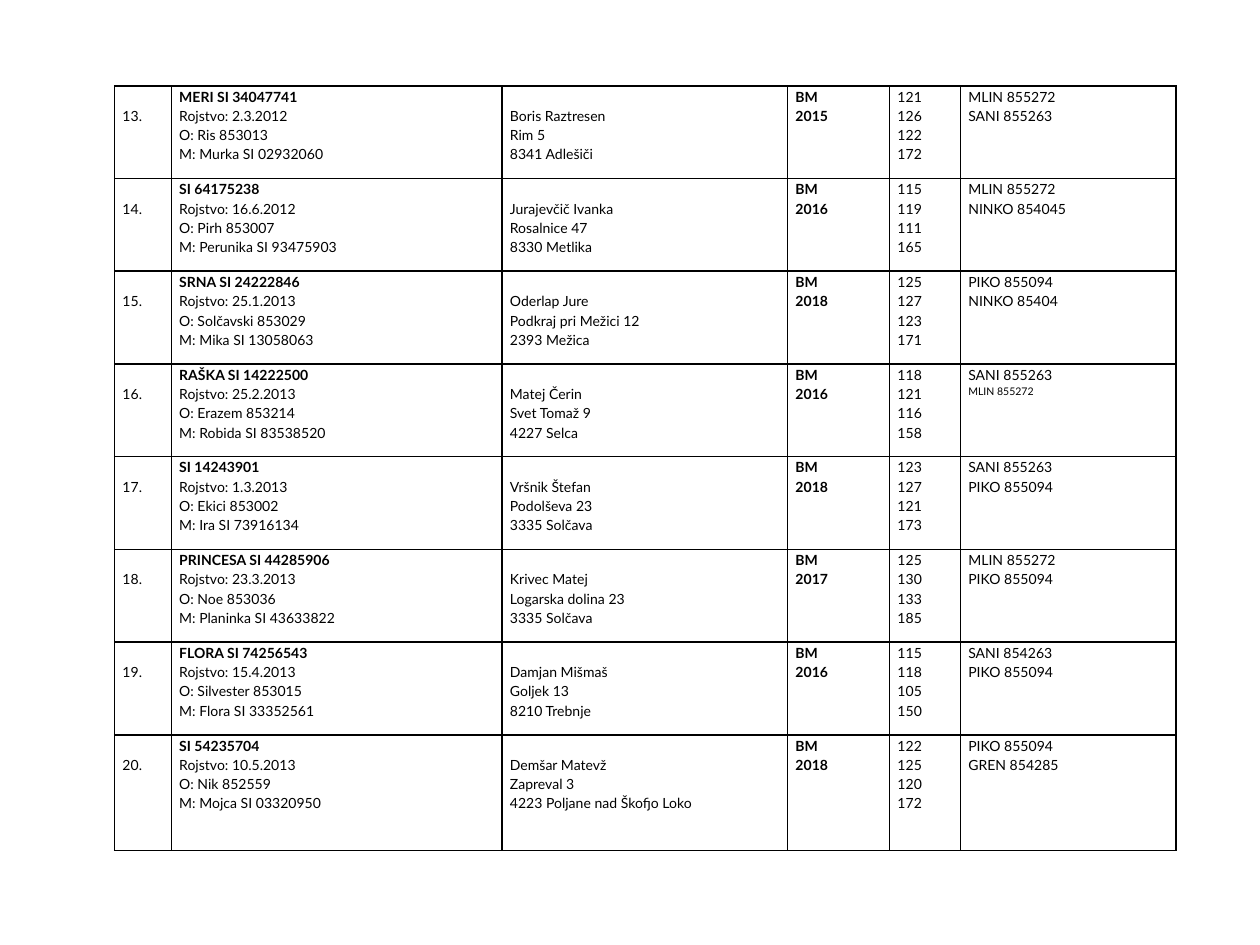
from lxml import etree
from pptx import Presentation
from pptx.dml.color import RGBColor
from pptx.enum.text import PP_ALIGN
from pptx.oxml.ns import qn
from pptx.util import Pt

JUSTIFY = PP_ALIGN.JUSTIFY

THEME = {"font": "Lato", "ink": "000000", "size": 8, "small": 6,
         "rule": 1, "lead": 1.15}

# number, animal, born, father, mother, owner lines, year, scores, mates
HERD = [
    (13, "MERI SI 34047741", "2.3.2012", "Ris 853013", "Murka SI 02932060",
     ["Boris Raztresen", "Rim 5", "8341 Adlešiči"],
     2015, [121, 126, 122, 172], ["MLIN 855272", "SANI 855263"]),
    (14, "SI 64175238", "16.6.2012", "Pirh 853007", "Perunika SI 93475903",
     ["Jurajevčič Ivanka", "Rosalnice 47", "8330 Metlika"],
     2016, [115, 119, 111, 165], ["MLIN 855272", "NINKO 854045"]),
    (15, "SRNA SI 24222846", "25.1.2013", "Solčavski 853029", "Mika SI 13058063",
     ["Oderlap Jure", "Podkraj pri Mežici 12", "2393 Mežica"],
     2018, [125, 127, 123, 171], ["PIKO 855094", "NINKO 85404"]),
    (16, "RAŠKA SI 14222500", "25.2.2013", "Erazem 853214", "Robida SI 83538520",
     ["Matej Čerin", "Svet Tomaž 9", "4227 Selca"],
     2016, [118, 121, 116, 158], ["SANI 855263", "MLIN 855272"]),
    (17, "SI 14243901", "1.3.2013", "Ekici 853002", "Ira SI 73916134",
     ["Vršnik Štefan", "Podolševa 23", "3335 Solčava"],
     2018, [123, 127, 121, 173], ["SANI 855263", "PIKO 855094"]),
    (18, "PRINCESA SI 44285906", "23.3.2013", "Noe 853036", "Planinka SI 43633822",
     ["Krivec Matej", "Logarska dolina 23", "3335 Solčava"],
     2017, [125, 130, 133, 185], ["MLIN 855272", "PIKO 855094"]),
    (19, "FLORA SI 74256543", "15.4.2013", "Silvester 853015", "Flora SI 33352561",
     ["Damjan Mišmaš", "Goljek 13", "8210 Trebnje"],
     2016, [115, 118, 105, 150], ["SANI 854263", "PIKO 855094"]),
    (20, "SI 54235704", "10.5.2013", "Nik 852559", "Mojca SI 03320950",
     ["Demšar Matevž", "Zapreval 3", "4223 Poljane nad Škofjo Loko"],
     2018, [122, 125, 120, 172], ["PIKO 855094", "GREN 854285"]),
]
SMALL_MATE = 16  # the second mate of this animal is set in small type

LEFT, TOP = 65.5, 49
COLS = [32.4, 189, 163.2, 58.3, 40.5, 123.1]
ROW, LAST_ROW = 53, 66
PAD, LINE = 4.5, 11


def write(cell, lines, bold=0, drop=0, small=()):
    """Fill a cell; bold counts the leading bold lines, drop the lines left free above."""
    cell.margin_left = cell.margin_right = Pt(PAD)
    cell.margin_top, cell.margin_bottom = Pt(drop * LINE), 0
    frame = cell.text_frame
    for i, line in enumerate(lines):
        para = frame.add_paragraph() if i else frame.paragraphs[0]
        para.alignment, para.line_spacing = JUSTIFY, THEME["lead"]
        run = para.add_run()
        run.text = str(line)
        run.font.name = THEME["font"]
        run.font.size = Pt(THEME["small" if i in small else "size"])
        run.font.bold = i < bold
        run.font.color.rgb = RGBColor.from_string(THEME["ink"])


def frame_cell(cell):
    """Clear the fill and rule all four sides."""
    cell.fill.background()
    props = cell._tc.get_or_add_tcPr()
    for i, side in enumerate(("lnL", "lnR", "lnT", "lnB")):
        rule = etree.Element(qn(f"a:{side}"), w=str(Pt(THEME["rule"])))
        fill = etree.SubElement(rule, qn("a:solidFill"))
        etree.SubElement(fill, qn("a:srgbClr"), val=THEME["ink"])
        props.insert(i, rule)


def main():
    deck = Presentation()
    deck.slide_width, deck.slide_height = Pt(720), Pt(540)
    slide = deck.slides.add_slide(deck.slide_layouts[6])

    heights = [ROW] * (len(HERD) - 1) + [LAST_ROW]
    table = slide.shapes.add_table(len(HERD), len(COLS), Pt(LEFT), Pt(TOP),
                                   Pt(sum(COLS)), Pt(sum(heights))).table
    table.first_row = table.horz_banding = False
    for col, width in zip(table.columns, COLS):
        col.width = Pt(width)

    for row, height, entry in zip(table.rows, heights, HERD):
        row.height = Pt(height)
        num, name, born, father, mother, owner, year, scores, mates = entry
        animal = [name, f"Rojstvo: {born}", f"O: {father}", f"M: {mother}"]
        cells = row.cells
        write(cells[0], [f"{num}."], drop=1)
        write(cells[1], animal, bold=1)
        write(cells[2], owner, drop=1)
        write(cells[3], ["BM", year], bold=2)
        write(cells[4], scores)
        write(cells[5], mates, small=[1] if num == SMALL_MATE else ())
        for cell in cells:
            frame_cell(cell)

    deck.save("out.pptx")


if __name__ == "__main__":
    main()
